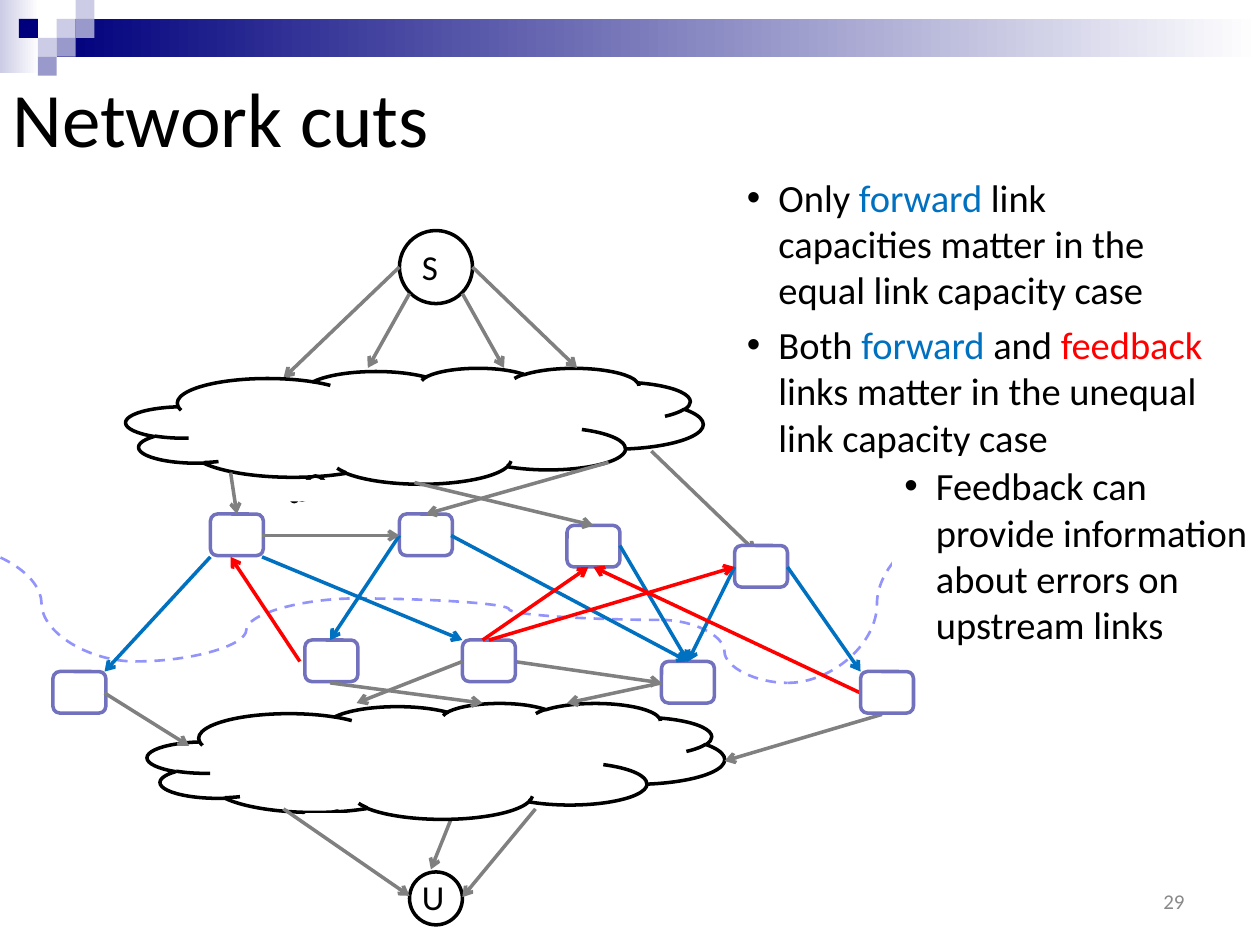
import dataclasses
import typing

import lxml.etree
import pptx
import pptx.dml.color
import pptx.enum.dml
import pptx.enum.shapes
import pptx.enum.text
import pptx.oxml.ns
import pptx.util

SHAPE = pptx.enum.shapes.MSO_SHAPE
CONNECTOR = pptx.enum.shapes.MSO_CONNECTOR
ALIGN = pptx.enum.text.PP_ALIGN
ANCHOR = pptx.enum.text.MSO_ANCHOR


@dataclasses.dataclass(frozen=True)
class Theme:
    """Colours, font and type sizes of the slide."""
    font: str = "Calibri"
    black: str = "000000"
    white: str = "FFFFFF"
    grey: str = "808080"
    number: str = "898989"
    forward: str = "0070C0"
    feedback: str = "FF0000"
    node: str = "7171BD"
    cut: str = "9393FC"
    navy: str = "00007D"
    violet: str = "9999CC"
    lilac: str = "CCCCE6"
    title_size: int = 44
    body_size: int = 22
    label_size: int = 20
    number_size: int = 12
    line: float = 2
    cut_line: float = 1.5


class Box(typing.NamedTuple):
    """Left, top, width and height in inches."""
    x: float
    y: float
    w: float
    h: float


class Link(typing.NamedTuple):
    """Start and end of an arrow in inches, with its colour."""
    x1: float
    y1: float
    x2: float
    y2: float
    color: str


class Note(typing.NamedTuple):
    """A bulleted text as pairs of wording and colour."""
    box: Box
    runs: list[tuple[str, str]]
    fill: str | None = None


T = Theme()
TILE = 0.15
TILES = [(3, 1, T.lilac), (4, 0, T.lilac), (4, 1, T.violet), (2, 2, T.lilac),
         (1, 1, T.navy), (3, 2, T.violet), (2, 3, T.violet)]
BANDS = [(Box(0, 0, 0.31, 0.58), T.lilac), (Box(0.45, 0.15, 9.55, 0.3), T.navy)]
TERMINALS = [("S", Box(3.17, 1.83, 0.58, 0.58), 1.9), ("U", Box(3.25, 6.92, 0.42, 0.42), 6.9)]
CUT = [(-0.42, 4.33), (1.08, 5.25), (2.83, 4.75), (5.25, 4.92), (6.25, 5.42), (7.67, 4.17)]
NODES = [(1.67, 4.08), (2.42, 5.08), (3.17, 4.08), (3.67, 5.08), (4.5, 4.17), (0.42, 5.33),
         (5.83, 4.33), (5.25, 5.25)]
LAST_NODE = (6.83, 5.33)
CLOUDS = [Box(1, 2.92, 4.58, 0.92), Box(1.17, 5.58, 4.58, 0.92)]
MASKS = [Box(2.43, 6.47, 0.42, 0.25), Box(2.28, 3.81, 0.42, 0.17)]
BACK_LINKS = [Link(*ends, T.grey) for ends in [
    (3.17, 2.12, 2.25, 3), (3.25, 2.33, 2.92, 2.92), (4.08, 5.25, 5.25, 5.42),
    (3.67, 2.33, 4, 2.92), (5.17, 3.58, 6, 4.38)]]
EXIT_LINKS = [Link(3.58, 6.5, 3.42, 6.9, T.grey), Link(4.25, 6.42, 3.67, 7.12, T.grey)]
CLOUD_LINKS = [Link(*ends, T.grey) for ends in [
    (1.83, 3.75, 1.88, 4.08), (3.29, 3.83, 4.71, 4.17), (4.83, 3.67, 3.38, 4.08)]]
FRONT_LINKS = [Link(*ends, color) for color, group in [
    (T.grey, [(0.83, 5.5, 1.5, 5.92), (3.67, 5.25, 2.83, 5.58), (2.62, 5.42, 3.83, 5.58),
              (5.25, 5.42, 4.5, 5.58)]),
    (T.forward, [(1.67, 4.42, 0.83, 5.33), (2.08, 4.42, 3.67, 5.08), (3.17, 4.25, 2.62, 5.08),
                 (3.58, 4.25, 5.46, 5.25), (4.92, 4.33, 5.46, 5.25), (5.83, 4.5, 5.46, 5.25),
                 (6.25, 4.5, 6.83, 5.33)]),
    (T.feedback, [(2.38, 5.25, 1.83, 4.42), (3.83, 5.08, 4.67, 4.5), (3.88, 5.08, 5.83, 4.5),
                  (6.83, 5.5, 4.71, 4.5)]),
    (T.grey, [(7, 5.67, 5.75, 6.04), (2.25, 6.42, 3.25, 7.11), (3.75, 2.12, 4.58, 2.92),
              (2.08, 4.25, 3.17, 4.25)]),
] for ends in group]
NOTES = [
    Note(Box(5.83, 2.5, 3.83, 1.21), [
        ("Both ", T.black), ("forward", T.forward), (" and ", T.black), ("feedback ", T.feedback),
        ("links matter in the unequal link capacity case", T.black)]),
    Note(Box(5.83, 1.33, 3.83, 1.21), [
        ("Only ", T.black), ("forward", T.forward),
        (" link capacities matter in the equal link capacity case", T.black)]),
    Note(Box(7.08, 3.62, 2.92, 1.95), [
        ("Feedback can provide information about errors on upstream links", T.black)], T.white),
]


def cm(inches: float) -> pptx.util.Length:
    """Convert inches to a Cm length."""
    return pptx.util.Cm(inches * 2.54)


def rgb(color: str) -> pptx.dml.color.RGBColor:
    """Turn a hex string into a colour."""
    return pptx.dml.color.RGBColor.from_string(color)


def add_shape(s, kind, box: Box, fill: str, line: str | None = None, fade: bool = False):
    """Draw a preset shape with a solid or fading fill."""
    sp = s.shapes.add_shape(kind, *map(cm, box))
    sp.shadow.inherit = False
    if fade:
        sp.fill.gradient()
        sp.fill.gradient_angle = 0
        for stop, color in zip(sp.fill.gradient_stops, (fill, T.white)):
            stop.color.rgb = rgb(color)
    else:
        sp.fill.solid()
        sp.fill.fore_color.rgb = rgb(fill)
    if line:
        sp.line.color.rgb = rgb(line)
        sp.line.width = pptx.util.Pt(T.line)
    else:
        sp.line.fill.background()
    return sp


def add_line(s, kind, link: Link, width: float):
    """Draw a connector without a shadow."""
    sp = s.shapes.add_connector(kind, *map(cm, link[:4]))
    sp.line.color.rgb = rgb(link.color)
    sp.line.width = pptx.util.Pt(width)
    lxml.etree.SubElement(sp._element.spPr, pptx.oxml.ns.qn("a:effectLst"))
    return sp


def add_links(s, links: list[Link]) -> None:
    """Draw arrows between parts of the network."""
    for link in links:
        sp = add_line(s, CONNECTOR.STRAIGHT, link, T.line)
        lxml.etree.SubElement(sp.line._get_or_add_ln(), pptx.oxml.ns.qn("a:tailEnd"), type="arrow")


def add_node(s, x: float, y: float) -> None:
    """Draw one network node."""
    add_shape(s, SHAPE.ROUNDED_RECTANGLE, Box(x, y, 0.42, 0.33), T.white, T.node)


def write(sp, runs: list[tuple[str, str]], size: int, align=ALIGN.LEFT, anchor=ANCHOR.TOP):
    """Write one paragraph of coloured runs."""
    tf = sp.text_frame
    tf.word_wrap = True
    tf.vertical_anchor = anchor
    p = tf.paragraphs[0]
    p.alignment = align
    p.font.name = T.font
    p.font.size = pptx.util.Pt(size)
    p.font.color.rgb = rgb(runs[0][1])
    for text, color in runs:
        r = p.add_run()
        r.text = text
        if color != runs[0][1]:
            r.font.color.rgb = rgb(color)
    return p


def add_note(s, note: Note) -> None:
    """Draw a bulleted note, on a filled panel if it has a fill."""
    sp = (add_shape(s, SHAPE.RECTANGLE, note.box, note.fill) if note.fill
          else s.shapes.add_textbox(*map(cm, note.box)))
    pPr = write(sp, note.runs, T.body_size)._p.get_or_add_pPr()
    pPr.set("marL", str(cm(0.25)))
    pPr.set("indent", str(cm(-0.25)))
    bullet_font = lxml.etree.Element(pptx.oxml.ns.qn("a:buFont"), typeface="Arial")
    bullet = lxml.etree.Element(pptx.oxml.ns.qn("a:buChar"), char="•")
    pPr.insert(0, bullet_font)
    pPr.insert(1, bullet)


def main() -> None:
    """Build and save the network cuts slide."""
    prs = pptx.Presentation()
    prs.slide_width, prs.slide_height = cm(10), cm(7.5)
    s = prs.slides.add_slide(prs.slide_layouts[5])
    for box, color in BANDS:
        add_shape(s, SHAPE.RECTANGLE, box, color, fade=True)
    for col, row, color in TILES:
        add_shape(s, SHAPE.RECTANGLE, Box(col * TILE, row * TILE, TILE, TILE), color)
    title = s.shapes.title
    title.left, title.top, title.width, title.height = map(cm, (0, 0.3, 9, 1.25))
    write(title, [("Network cuts", T.black)], T.title_size, anchor=ANCHOR.MIDDLE)
    number = s.shapes.add_textbox(*map(cm, (7.17, 6.95, 2.33, 0.4)))
    write(number, [("29", T.number)], T.number_size, ALIGN.RIGHT, ANCHOR.MIDDLE)
    for _, box, _ in TERMINALS:
        add_shape(s, SHAPE.OVAL, box, T.white, T.black)
    add_links(s, BACK_LINKS)
    for start, end in zip(CUT, CUT[1:]):
        sp = add_line(s, CONNECTOR.CURVE, Link(*start, *end, T.cut), T.cut_line)
        sp.line.dash_style = pptx.enum.dml.MSO_LINE.DASH
    for x, y in NODES:
        add_node(s, x, y)
    for name, _, top in TERMINALS:
        label = s.shapes.add_textbox(*map(cm, (3.25, top, 0.33, 0.44)))
        write(label, [(name, T.black)], T.label_size)
    add_links(s, EXIT_LINKS)
    for box in CLOUDS:
        add_shape(s, SHAPE.CLOUD_CALLOUT, box, T.white, T.black)
    add_links(s, CLOUD_LINKS)
    for box, line in zip(MASKS, (T.white, None)):
        add_shape(s, SHAPE.RECTANGLE, box, T.white, line)
    add_links(s, FRONT_LINKS)
    for note in NOTES:
        add_note(s, note)
    add_node(s, *LAST_NODE)
    prs.save("out.pptx")


if __name__ == "__main__":
    main()
